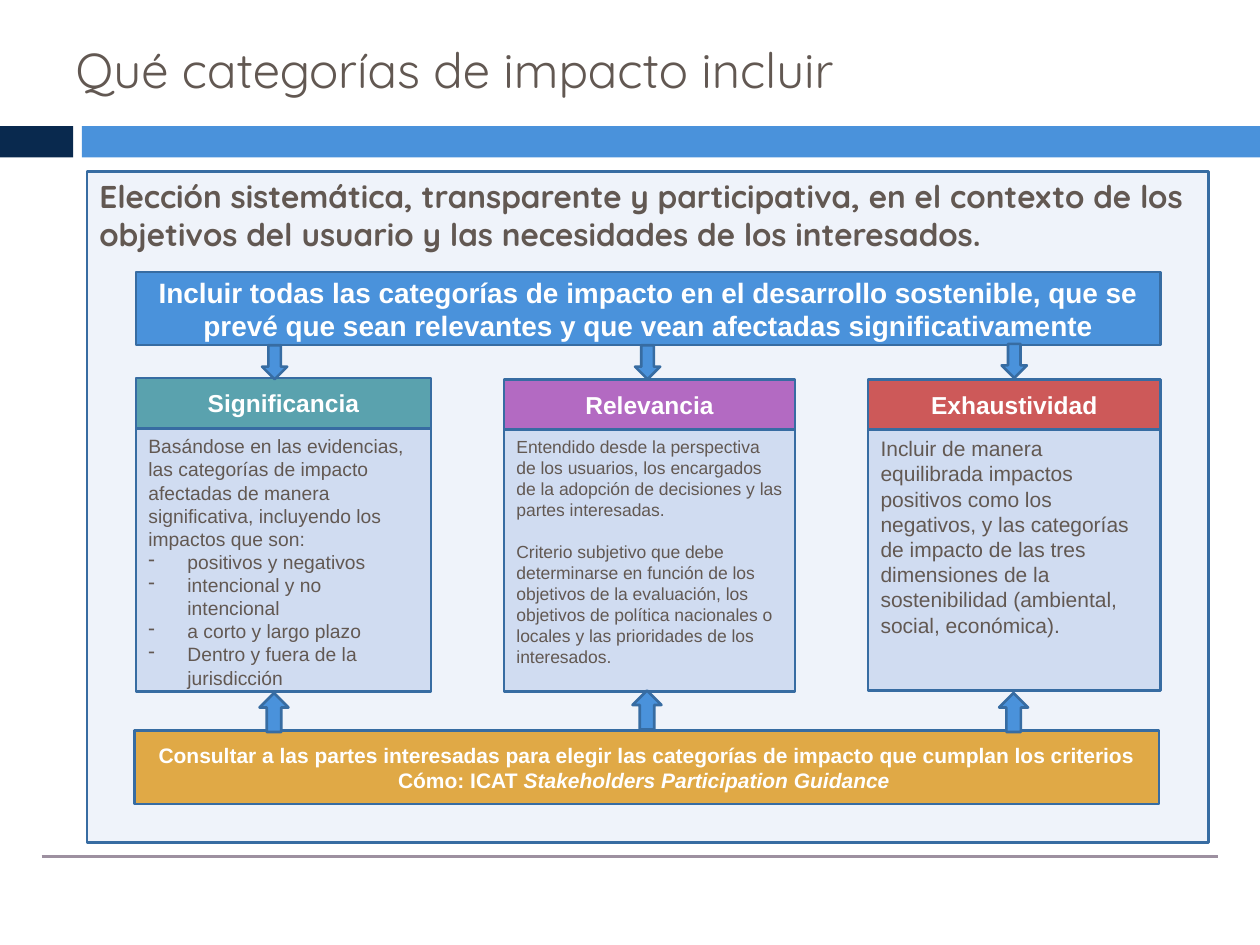
from pptx import Presentation
from pptx.dml.color import RGBColor
from pptx.enum.shapes import MSO_CONNECTOR, MSO_SHAPE
from pptx.enum.text import MSO_ANCHOR, PP_ALIGN
from pptx.oxml.ns import qn
from pptx.util import Inches, Pt
from lxml import etree

RECT, DOWN, UP = MSO_SHAPE.RECTANGLE, MSO_SHAPE.DOWN_ARROW, MSO_SHAPE.UP_ARROW
TOP, MIDDLE = MSO_ANCHOR.TOP, MSO_ANCHOR.MIDDLE
LEFT, CENTER = PP_ALIGN.LEFT, PP_ALIGN.CENTER
LINE = MSO_CONNECTOR.STRAIGHT

COLORS = {
    "navy": "09294E", "blue": "4A92DB", "edge": "376CA2", "rule": "9D90A0",
    "text": "625852", "white": "FFFFFF", "panel": "E9EEF8", "body": "D0DCF1",
    "teal": "5AA2AE", "purple": "B36AC2", "red": "CD5959", "gold": "E0A946",
}

TITLE = "Qué categorías de impacto incluir"
INTRO = ("Elección sistemática, transparente y participativa, en el contexto de los "
         "objetivos del usuario y las necesidades de los interesados.")
GOAL = ("Incluir todas las categorías de impacto en el desarrollo sostenible, que se "
        "prevé que sean relevantes y que vean afectadas significativamente")
CONSULT = [
    [("Consultar a las partes interesadas para elegir las categorías de impacto "
      "que cumplan los criterios", False)],
    [("Cómo: ICAT ", False), ("Stakeholders Participation Guidance ", True)],
]
# Each column: head, color, left, width, head top, body bottom, size, texts, bullets
COLUMNS = [
    ("Significancia", "teal", 1.08, 2.34, 3.0, 5.49, 11,
     ["Basándose en las evidencias, las categorías de impacto afectadas de manera "
      "significativa, incluyendo los impactos que son:"],
     ["positivos y negativos", "intencional y no intencional",
      "a corto y largo plazo", "Dentro y fuera de la jurisdicción"]),
    ("Relevancia", "purple", 4.0, 2.31, 3.01, 5.49, 10,
     ["Entendido desde la perspectiva de los usuarios, los encargados de la adopción "
      "de decisiones y las partes interesadas.",
      "Criterio subjetivo que debe determinarse en función de los objetivos de la "
      "evaluación, los objetivos de política nacionales o locales y las prioridades "
      "de los interesados."], []),
    ("Exhaustividad", "red", 6.89, 2.32, 3.01, 5.48, 12,
     ["Incluir de manera equilibrada impactos positivos como los negativos, y las "
      "categorías de impacto de las tres dimensiones de la sostenibilidad (ambiental, "
      "social, económica)."], []),
]
# Each pair of arrows: middle, top of the upper one, top of the lower one
AXES = [(2.18, 2.74, 5.5), (5.14, 2.74, 5.48), (8.05, 2.73, 5.5)]
HEAD = 0.4


def color(name):
    return RGBColor.from_string(COLORS[name])


def add_box(slide, kind, area, fill, edge=True):
    box = slide.shapes.add_shape(kind, *map(Inches, area))
    box.shadow.inherit = False
    box.fill.solid()
    box.fill.fore_color.rgb = color(fill)
    if edge:
        box.line.color.rgb = color("edge")
        box.line.width = Pt(1.5)
    else:
        box.line.fill.background()
    return box


def add_bullet(para):
    props = para._p.get_or_add_pPr()
    props.set("marL", str(Inches(0.31)))
    props.set("indent", str(-Inches(0.31)))
    etree.SubElement(props, qn("a:buChar")).set("char", "-")


def write(shape, paras, size, ink="white", bold=True, align=CENTER, anchor=MIDDLE,
          font="Arial", gap=0, bullets=()):
    """Fill a shape with paragraphs, each a list of (text, italic) runs."""
    frame = shape.text_frame
    frame.word_wrap = True
    frame.vertical_anchor = anchor
    rows = [(runs, False) for runs in paras] + [([(t, False)], True) for t in bullets]
    for i, (runs, listed) in enumerate(rows):
        para = frame.paragraphs[0] if i == 0 else frame.add_paragraph()
        para.alignment = align
        para.line_spacing = 1.0
        para.space_before = Pt(gap if i and not listed else 0)
        if listed:
            add_bullet(para)
        for text, italic in runs:
            run = para.add_run()
            run.text = text
            run.font.name = font
            run.font.size = Pt(size)
            run.font.bold = bold
            run.font.italic = italic
            run.font.color.rgb = color(ink)


def add_column(slide, column):
    name, fill, left, width, top, bottom, size, texts, bullets = column
    start = top + HEAD
    body = add_box(slide, RECT, (left, start, width, bottom - start), "body")
    write(body, [[(t, False)] for t in texts], size, "text", False, LEFT, TOP,
          gap=12, bullets=bullets)
    head = add_box(slide, RECT, (left, top, width, HEAD), fill)
    write(head, [[(name, False)]], 14)


def main():
    deck = Presentation()
    deck.slide_width, deck.slide_height = Inches(10), Inches(7.5)
    slide = deck.slides.add_slide(deck.slide_layouts[5])

    title = slide.shapes.title
    title.left, title.top, title.width, title.height = map(Inches, (0.5, 0.07, 8.4, 0.95))
    write(title, [[(TITLE, False)]], 28, "text", False, LEFT, font="Quicksand")

    add_box(slide, RECT, (0, 1, 0.58, 0.25), "navy", False)
    add_box(slide, RECT, (0.65, 1, 9.35, 0.25), "blue", False)
    rule = slide.shapes.add_connector(LINE, *map(Inches, (0.33, 6.8, 9.67, 6.8)))
    rule.line.color.rgb = color("rule")
    rule.line.width = Pt(1.75)
    etree.SubElement(rule._element.spPr, qn("a:effectLst"))

    panel = add_box(slide, RECT, (0.69, 1.36, 8.9, 5.33), "panel")
    tint = panel._element.spPr.find(qn("a:solidFill"))[0]
    etree.SubElement(tint, qn("a:alpha")).set("val", "70000")
    write(panel, [[(INTRO, False)]], 18, "text", True, LEFT, TOP, "Quicksand")

    for column in COLUMNS:
        add_column(slide, column)
    goal = add_box(slide, RECT, (1.08, 2.16, 8.13, 0.58), "blue")
    write(goal, [[(GOAL, False)]], 16)
    consult = add_box(slide, RECT, (1.07, 5.8, 8.13, 0.58), "gold")
    write(consult, CONSULT, 12)

    for mid, upper, lower in AXES:
        add_box(slide, DOWN, (mid - 0.1, upper, 0.2, 0.27), "blue")
        add_box(slide, UP, (mid - 0.12, lower, 0.23, 0.31), "blue")
    deck.save("out.pptx")


if __name__ == "__main__":
    main()
